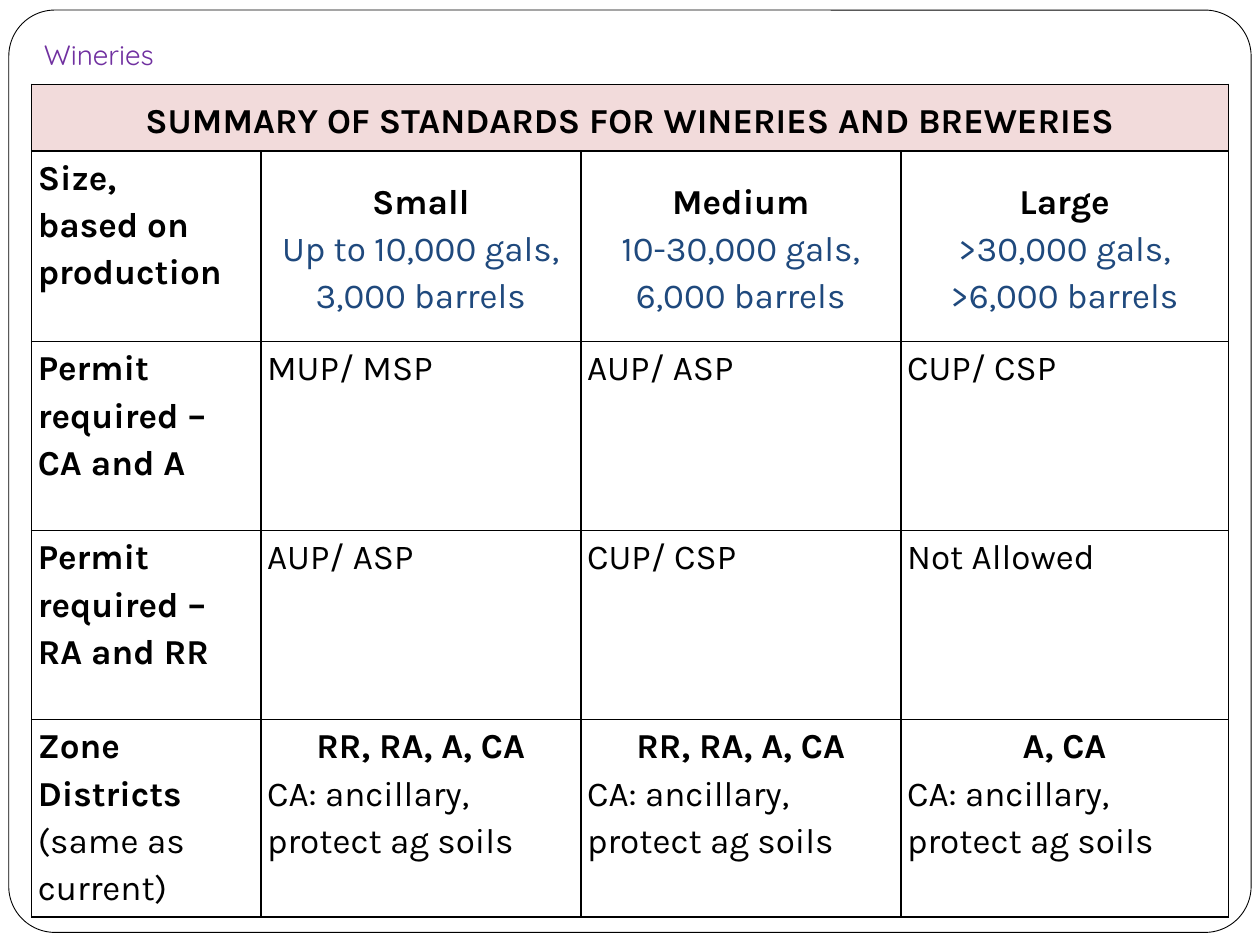
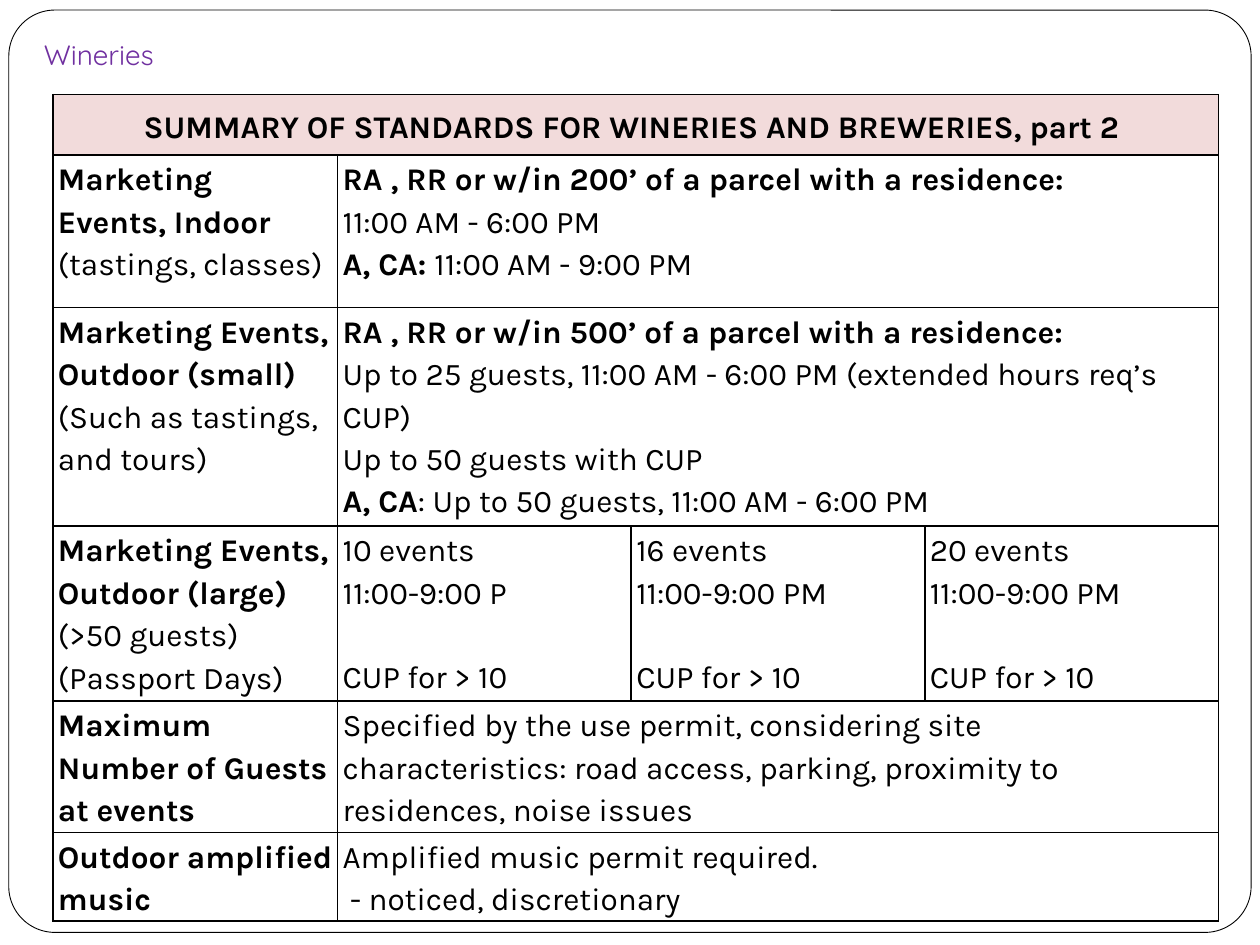
from dataclasses import dataclass

from lxml.etree import SubElement
from pptx import Presentation
from pptx.dml.color import RGBColor as RGB
from pptx.enum.shapes import MSO_SHAPE as Shape
from pptx.enum.text import MSO_ANCHOR as Anchor, MSO_AUTO_SIZE as Fit, PP_ALIGN as Align
from pptx.oxml.ns import qn
from pptx.slide import Slide
from pptx.table import _Cell
from pptx.util import Inches, Pt


@dataclass(frozen=True)
class Theme:
    ink: str = "000000"
    paper: str = "FFFFFF"
    band: str = "F2DBDB"
    blue: str = "1F497D"
    title: str = "7030A0"
    body_font: str = "Karla"
    title_font: str = "Quicksand"
    title_size: float = 16
    spacing: float = 1.15
    rule: float = 1
    edge: float = 0.5


@dataclass(frozen=True)
class Line:
    """One paragraph; text between asterisks is bold."""
    text: str
    color: str = Theme.ink
    align: Align = Align.LEFT
    gap: float = 0


@dataclass(frozen=True)
class Box:
    lines: tuple[Line, ...]
    anchor: Anchor = Anchor.TOP
    fill: str | None = None


@dataclass(frozen=True)
class Grid:
    left: float
    top: float
    cols: tuple[float, ...]
    heights: tuple[float, ...]
    size: float
    inset: float
    rows: tuple[tuple[Box, ...], ...]


THEME = Theme()


def box(*texts: str) -> Box:
    return Box(tuple(Line(text) for text in texts))


def head(text: str) -> Box:
    return Box((Line(f"*{text}*", align=Align.CENTER),), Anchor.MIDDLE, THEME.band)


def tier(name: str, *limits: str) -> Box:
    """A production size with its limits in blue."""
    lines = (Line(f"*{name}*", align=Align.CENTER),
             *(Line(text, THEME.blue, Align.CENTER) for text in limits))
    return Box(lines, Anchor.MIDDLE)


def zone(codes: str) -> Box:
    return Box((Line(f"*{codes}*", align=Align.CENTER),
                Line("CA: ancillary,"), Line("protect ag soils")))


def quota(count: int, hours: str) -> Box:
    return Box((Line(f"{count} events"), Line(hours), Line("CUP for > 10", gap=24.2)))


SIZES = Grid(
    0.25, 0.67, (1.82, 2.54, 2.54, 2.6), (0.53, 1.51, 1.5, 1.5, 1.57), 20, 0.05,
    (
        (head("SUMMARY OF STANDARDS FOR WINERIES AND BREWERIES"),),
        (box("*Size,*", "*based on production*"),
         tier("Small", "Up to 10,000 gals,", "3,000 barrels"),
         tier("Medium", "10-30,000 gals,", "6,000 barrels"),
         tier("Large", ">30,000 gals,", ">6,000 barrels")),
        (box("*Permit required – CA and A*"),
         box("MUP/ MSP"), box("AUP/ ASP"), box("CUP/ CSP")),
        (box("*Permit required – RA and RR*"),
         box("AUP/ ASP"), box("CUP/ CSP"), box("Not Allowed")),
        (box("*Zone Districts *(same as current)"),
         zone("RR, RA, A, CA"), zone("RR, RA, A, CA"), zone("A, CA")),
    ),
)

EVENTS = Grid(
    0.42, 0.75, (2.26, 2.33, 2.33, 2.33), (0.48, 1.21, 1.73, 1.39, 1.04, 0.7), 18, 0.04,
    (
        (head("SUMMARY OF STANDARDS FOR WINERIES AND BREWERIES, part 2 "),),
        (box("*Marketing*", "*Events, Indoor*", "(tastings, classes)"),
         box("*RA , RR or w/in 200’ of a parcel with a residence:*",
             "11:00 AM - 6:00 PM",
             "*A, CA: *11:00 AM - 9:00 PM")),
        (box("*Marketing Events, Outdoor (small)*", "(Such as tastings, and tours)"),
         box("*RA , RR or w/in 500’ of a parcel with a residence:*",
             "Up to 25 guests, 11:00 AM - 6:00 PM (extended hours req’s CUP)",
             "Up to 50 guests with CUP",
             "*A, CA*: Up to 50 guests, 11:00 AM - 6:00 PM")),
        (box("*Marketing Events, Outdoor (large)*", "(>50 guests)", "(Passport Days)"),
         quota(10, "11:00-9:00 P"), quota(16, "11:00-9:00 PM"), quota(20, "11:00-9:00 PM")),
        (box("*Maximum Number of Guests at events*"),
         box("Specified by the use permit, considering site characteristics: "
             "road access, parking, proximity to residences, noise issues")),
        (box("*Outdoor amplified music*"),
         box("Amplified music permit required.", " - noticed, discretionary")),
    ),
)


def style(item: object, **values: object) -> None:
    for name, value in values.items():
        setattr(item, name, value)


def paint(font, name: str, size: float, color: str, bold: bool = False) -> None:
    style(font, name=name, size=Pt(size), bold=bold)
    font.color.rgb = RGB.from_string(color)


def rule(cell: _Cell) -> None:
    """Rule all four sides of a cell."""
    props = cell._tc.get_or_add_tcPr()
    for side in ("lnL", "lnR", "lnT", "lnB"):
        line = SubElement(props, qn(f"a:{side}"), w=str(Pt(THEME.rule)))
        fill = SubElement(line, qn("a:solidFill"))
        SubElement(fill, qn("a:srgbClr"), val=THEME.ink)


def write(cell: _Cell, item: Box, grid: Grid) -> None:
    side = Inches(grid.inset)
    style(cell, vertical_anchor=item.anchor, margin_left=side, margin_right=side,
          margin_top=Inches(0.01), margin_bottom=0)
    frame = cell.text_frame
    for i, line in enumerate(item.lines):
        para = frame.add_paragraph() if i else frame.paragraphs[0]
        style(para, alignment=line.align, line_spacing=THEME.spacing,
              space_before=Pt(line.gap))
        for j, part in enumerate(line.text.split("*")):
            if part:
                run = para.add_run()
                run.text = part
                paint(run.font, THEME.body_font, grid.size, line.color, j % 2 == 1)
    if item.fill:
        cell.fill.solid()
        cell.fill.fore_color.rgb = RGB.from_string(item.fill)


def draw_grid(slide: Slide, grid: Grid) -> None:
    table = slide.shapes.add_table(
        len(grid.heights), len(grid.cols), Inches(grid.left), Inches(grid.top),
        Inches(sum(grid.cols)), Inches(sum(grid.heights))).table
    style(table, first_row=False, horz_banding=False)
    for col, width in zip(table.columns, grid.cols):
        col.width = Inches(width)
    for row, height in zip(table.rows, grid.heights):
        row.height = Inches(height)
    for cell in table.iter_cells():
        rule(cell)
        cell.fill.background()
    last = len(grid.cols) - 1
    for r, items in enumerate(grid.rows):
        end = len(items) - 1
        if end < last:
            table.cell(r, end).merge(table.cell(r, last))
        for c, item in enumerate(items):
            write(table.cell(r, c), item, grid)


def draw_frame(slide: Slide) -> None:
    card = slide.shapes.add_shape(
        Shape.ROUNDED_RECTANGLE, Inches(0.07), Inches(0.08), Inches(9.86), Inches(7.32))
    card.adjustments[0] = 0.05
    card.shadow.inherit = False
    card.fill.solid()
    card.fill.fore_color.rgb = RGB.from_string(THEME.paper)
    card.line.color.rgb = RGB.from_string(THEME.ink)
    card.line.width = Pt(THEME.edge)


def draw_title(slide: Slide, text: str) -> None:
    frame = slide.shapes.add_textbox(
        Inches(0.25), Inches(0.25), Inches(1.17), Inches(0.37)).text_frame
    style(frame, word_wrap=True, auto_size=Fit.SHAPE_TO_FIT_TEXT)
    run = frame.paragraphs[0].add_run()
    run.text = text
    paint(run.font, THEME.title_font, THEME.title_size, THEME.title)


def main() -> None:
    deck = Presentation()
    style(deck, slide_width=Inches(10), slide_height=Inches(7.5))
    for grid in (SIZES, EVENTS):
        slide = deck.slides.add_slide(deck.slide_layouts[6])
        draw_frame(slide)
        draw_grid(slide, grid)
        draw_title(slide, "Wineries")
    deck.save("out.pptx")


if __name__ == "__main__":
    main()
